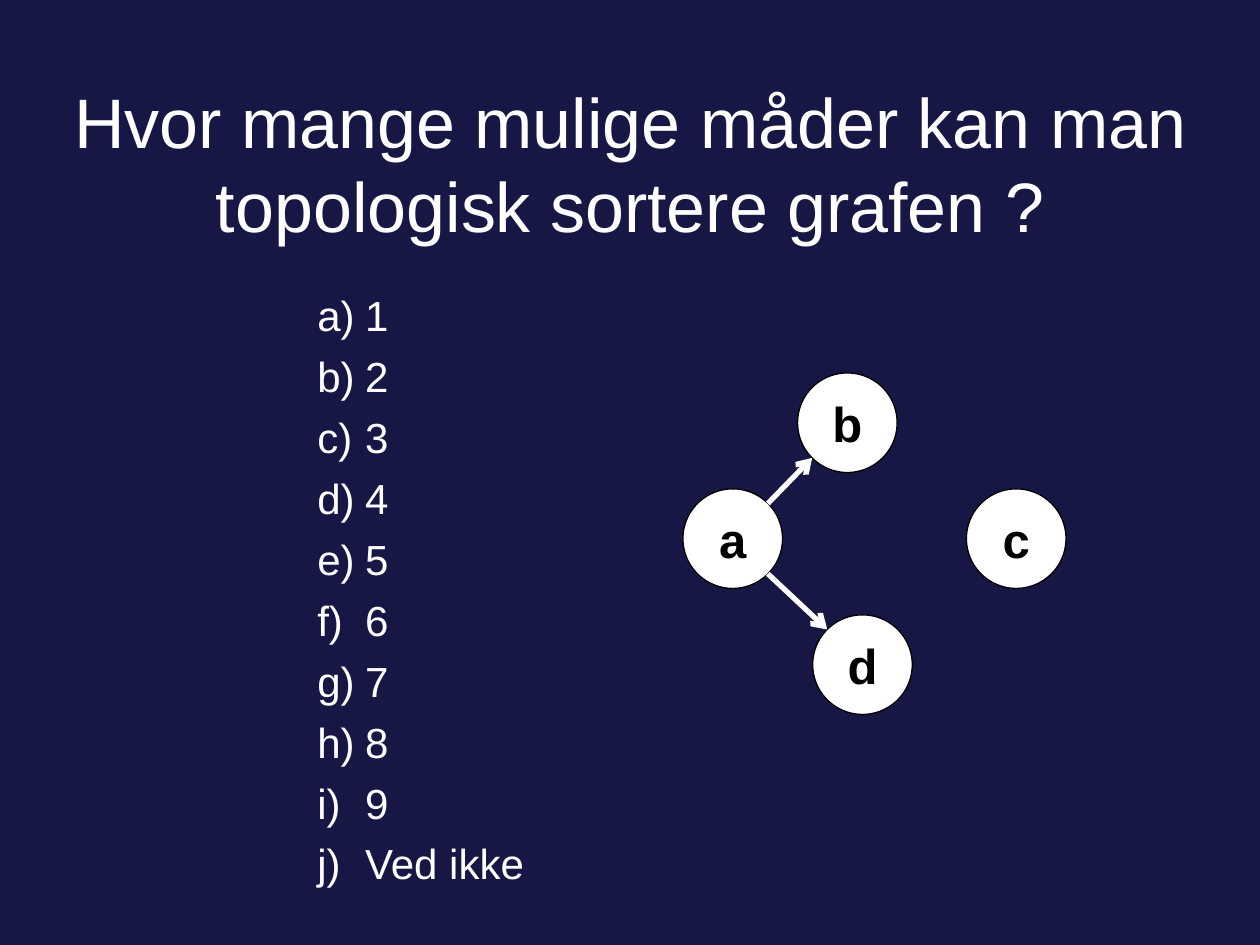
import math
from dataclasses import dataclass

import pptx
import pptx.util
import pptx.dml.color
import pptx.enum.shapes
import pptx.enum.text
import pptx.oxml.ns
from lxml import etree
from pptx.util import Inches, Pt


@dataclass(frozen=True)
class Theme:
    background: str = "171745"
    light: str = "FFFFFF"
    dark: str = "000000"
    font: str = "Arial"
    title_size: int = 40
    answer_size: int = 24
    node_size: int = 28


@dataclass(frozen=True)
class Node:
    label: str
    left: float
    top: float

    @property
    def center(self) -> tuple[float, float]:
        return self.left + DIAMETER / 2, self.top + DIAMETER / 2


THEME = Theme()
DIAMETER = 0.79
ANSWERS = [str(n) for n in range(1, 10)] + ["Ved ikke"]
NODES = {n.label: n for n in (
    Node("c", 7.67, 3.88),
    Node("a", 5.42, 3.88),
    Node("b", 6.33, 2.96),
    Node("d", 6.45, 4.88),
)}
EDGES = [("a", "b"), ("a", "d")]


def rgb(color: str):
    return pptx.dml.color.RGBColor.from_string(color)


def add_child(parent, tag: str, **attributes: str):
    return etree.SubElement(parent, pptx.oxml.ns.qn(tag), attributes)


def style(p, size: int, color: str, bold: bool = False) -> None:
    p.font.name = THEME.font
    p.font.size = Pt(size)
    p.font.bold = bold
    p.font.color.rgb = rgb(color)


def set_title(slide, text: str) -> None:
    sp = slide.shapes.title
    sp.left, sp.top = Inches(0), Inches(0.58)
    sp.width, sp.height = Inches(10), Inches(1.42)
    tf = sp.text_frame
    tf.text = text
    tf.vertical_anchor = pptx.enum.text.MSO_ANCHOR.MIDDLE
    p = tf.paragraphs[0]
    p.alignment = pptx.enum.text.PP_ALIGN.CENTER
    style(p, THEME.title_size, THEME.light)


def add_answers(slide, answers: list[str]) -> None:
    sp = slide.shapes.add_textbox(
        Inches(2.42), Inches(2.25), Inches(2.73), Inches(5))
    tf = sp.text_frame
    tf.word_wrap = True
    tf.text = "\n".join(answers)
    indent = Inches(0.38)
    for p in tf.paragraphs:
        style(p, THEME.answer_size, THEME.light)
        p.space_before = Pt(6)
        # Lettered list with a hanging indent
        pPr = p._p.get_or_add_pPr()
        pPr.set("marL", str(indent))
        pPr.set("indent", str(-indent))
        bullet = add_child(pPr, "a:buAutoNum", type="alphaLcParenR")
        pPr.find(pptx.oxml.ns.qn("a:spcBef")).addnext(bullet)


def add_node(slide, node: Node) -> None:
    sp = slide.shapes.add_shape(
        pptx.enum.shapes.MSO_SHAPE.OVAL, Inches(node.left), Inches(node.top),
        Inches(DIAMETER), Inches(DIAMETER))
    sp.shadow.inherit = False
    sp.fill.solid()
    sp.fill.fore_color.rgb = rgb(THEME.light)
    sp.line.color.rgb = rgb(THEME.dark)
    sp.line.width = Pt(0.75)
    tf = sp.text_frame
    tf.word_wrap = False
    tf.text = node.label
    p = tf.paragraphs[0]
    p.alignment = pptx.enum.text.PP_ALIGN.CENTER
    style(p, THEME.node_size, THEME.dark, bold=True)


def add_edge(slide, start: Node, end: Node) -> None:
    """Draw an arrow between the diagonal rim points of two nodes."""
    (x1, y1), (x2, y2) = start.center, end.center
    reach = DIAMETER / 2 * math.sqrt(0.5)
    dx, dy = math.copysign(reach, x2 - x1), math.copysign(reach, y2 - y1)
    line = slide.shapes.add_connector(
        pptx.enum.shapes.MSO_CONNECTOR.STRAIGHT,
        Inches(x1 + dx), Inches(y1 + dy), Inches(x2 - dx), Inches(y2 - dy))
    line.line.color.rgb = rgb(THEME.light)
    line.line.width = Pt(3)
    add_child(line.line._get_or_add_ln(), "a:tailEnd", type="arrow")
    add_child(line._element.spPr, "a:effectLst")


def main() -> None:
    prs = pptx.Presentation()
    prs.slide_width, prs.slide_height = Inches(10), Inches(7.5)
    slide = prs.slides.add_slide(prs.slide_layouts[5])
    slide.background.fill.solid()
    slide.background.fill.fore_color.rgb = rgb(THEME.background)

    # Question and possible answers
    set_title(slide, "Hvor mange mulige måder kan man topologisk sortere grafen ?")
    add_answers(slide, ANSWERS)

    # Directed graph
    for node in NODES.values():
        add_node(slide, node)
    for start, end in EDGES:
        add_edge(slide, NODES[start], NODES[end])

    prs.save("out.pptx")


if __name__ == "__main__":
    main()
